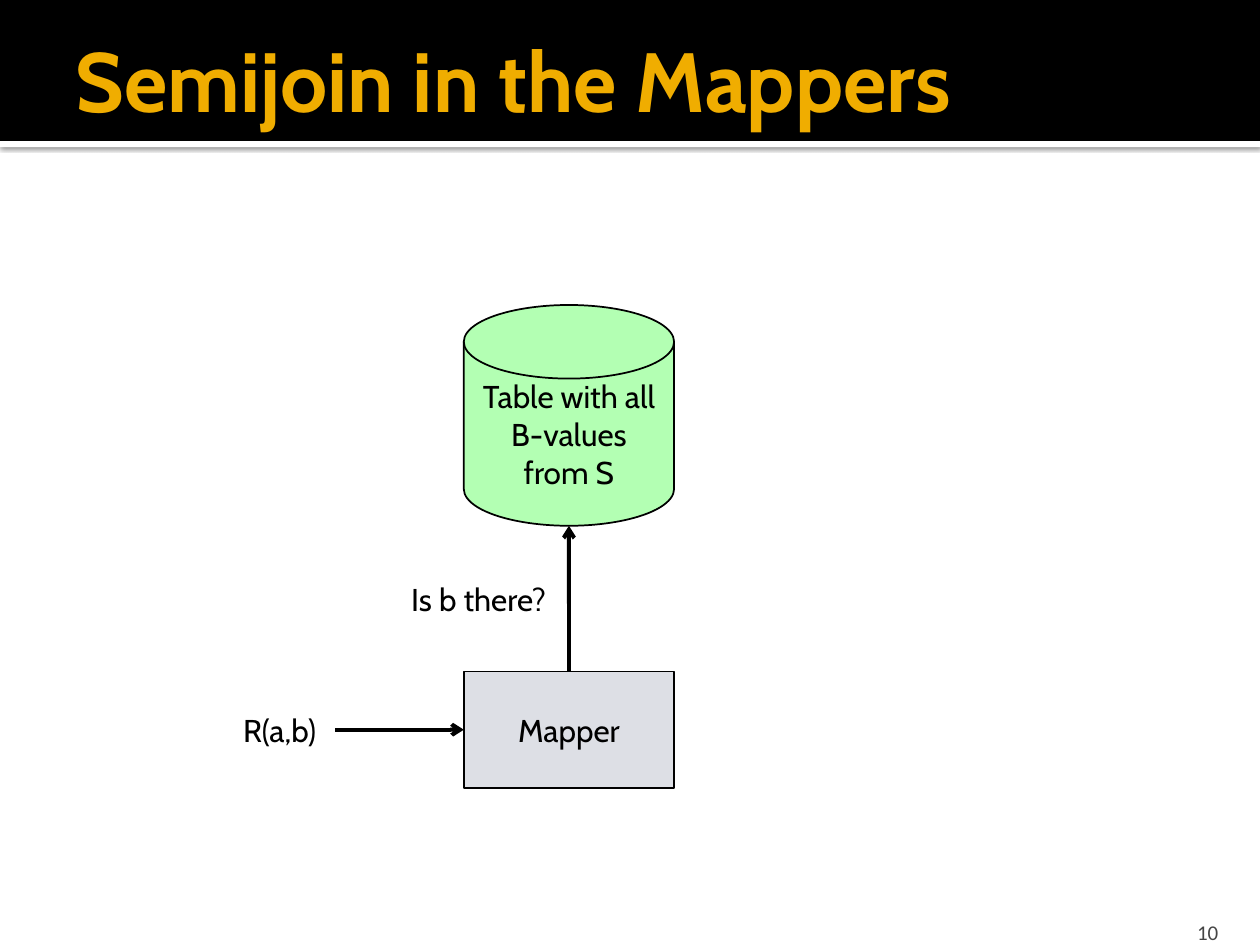
import pptx
import pptx.dml.color
import pptx.enum.shapes
import pptx.enum.text
import pptx.oxml
import pptx.oxml.ns
import pptx.util
from lxml import etree

Cm = pptx.util.Cm
Pt = pptx.util.Pt
SHAPE = pptx.enum.shapes.MSO_SHAPE
ALIGN = pptx.enum.text.PP_ALIGN
ANCHOR = pptx.enum.text.MSO_ANCHOR

PAGE_WIDTH, PAGE_HEIGHT = 25.4, 19.05
COLORS = {
    "black": "000000",
    "white": "FFFFFF",
    "title": "F0AD00",
    "number": "454545",
    "mapper": "DDDFE5",
    "table": "B3FFB3",
}


def color(name):
    return pptx.dml.color.RGBColor.from_string(COLORS[name])


def write(shape, text, size=18, font="Cabin", ink="black", bold=False,
          align=ALIGN.LEFT, anchor=ANCHOR.TOP, wrap=True):
    frame = shape.text_frame
    frame.word_wrap = wrap
    frame.vertical_anchor = anchor
    frame.text = text
    para = frame.paragraphs[0]
    para.alignment = align
    for span in para.runs:
        span.font.name = font
        span.font.size = Pt(size)
        span.font.bold = bold
        span.font.color.rgb = color(ink)
    return frame


def add_block(page, kind, left, top, width, height, fill, outlined=False):
    block = page.shapes.add_shape(kind, Cm(left), Cm(top), Cm(width), Cm(height))
    block.shadow.inherit = False
    block.fill.solid()
    block.fill.fore_color.rgb = color(fill)
    if outlined:
        block.line.color.rgb = color("black")
        block.line.width = Pt(1)
    else:
        block.line.fill.background()
    return block


def add_label(page, text, left, top, width, height, **style):
    box = page.shapes.add_textbox(Cm(left), Cm(top), Cm(width), Cm(height))
    return write(box, text, **style)


def add_arrow(page, x1, y1, x2, y2):
    arrow = page.shapes.add_connector(
        pptx.enum.shapes.MSO_CONNECTOR.STRAIGHT, Cm(x1), Cm(y1), Cm(x2), Cm(y2))
    arrow.line.color.rgb = color("black")
    arrow.line.width = Pt(2.25)
    head = etree.SubElement(arrow.line._get_or_add_ln(), pptx.oxml.ns.qn("a:tailEnd"))
    head.set("type", "arrow")
    etree.SubElement(arrow._element.spPr, pptx.oxml.ns.qn("a:effectLst"))
    return arrow


def add_drop_shadow(shape):
    effects = shape._element.spPr.find(pptx.oxml.ns.qn("a:effectLst"))
    effects.append(pptx.oxml.parse_xml(
        f'<a:outerShdw {pptx.oxml.ns.nsdecls("a")} blurRad="{Pt(2.5)}" '
        f'dist="{Pt(0.8)}" dir="5400000" algn="tl" rotWithShape="0">'
        f'<a:srgbClr val="{COLORS["black"]}"><a:alpha val="60000"/></a:srgbClr>'
        '</a:outerShdw>'))


def draw_header(page, left, top, width, height, title):
    # White strip with a shadow, below the black band
    strip = add_block(page, SHAPE.RECTANGLE, left, top + height, width, 0.13, "white")
    add_drop_shadow(strip)
    add_block(page, SHAPE.RECTANGLE, left, top, width, height, "black")
    # Title
    frame = add_label(page, title, left + 1.27, top + 0.43, width - 1.27, 2.34,
                      size=48, ink="title", bold=True, anchor=ANCHOR.MIDDLE)
    frame.margin_right = Cm(0.13)


def draw_page_number(page, left, top, width, height, number):
    frame = add_label(page, number, left, top, width, height, size=12, font="Calibri",
                      ink="number", align=ALIGN.RIGHT, anchor=ANCHOR.BOTTOM)
    frame.margin_bottom = 0


def draw_semijoin(page, left, top, width, height):
    block_width, mapper_height, table_height = 4.24, 2.34, 4.45
    block_left = left + width - block_width
    center = block_left + block_width / 2
    mapper_top = top + height - mapper_height
    mapper_middle = mapper_top + mapper_height / 2
    table_bottom = top + table_height
    label_height = 1.02

    # Mapper and its input
    mapper = add_block(page, SHAPE.RECTANGLE, block_left, mapper_top,
                       block_width, mapper_height, "mapper", outlined=True)
    write(mapper, "Mapper", align=ALIGN.CENTER, anchor=ANCHOR.MIDDLE)
    add_label(page, "R(a,b)", left, mapper_middle - label_height / 2,
              2.08, label_height, wrap=False)
    feed = add_arrow(page, left + 2.11, mapper_middle, block_left, mapper_middle)
    feed.end_connect(mapper, 1)

    # Lookup table
    table = add_block(page, SHAPE.FLOWCHART_MAGNETIC_DISK, block_left, top,
                      block_width, table_height, "table", outlined=True)
    write(table, "Table with all B-values from S",
          align=ALIGN.CENTER, anchor=ANCHOR.MIDDLE)

    # Question sent to the table
    question = add_arrow(page, center, mapper_top, center, table_bottom)
    question.begin_connect(mapper, 0)
    add_label(page, "Is b there?", center - 3.43,
              (table_bottom + mapper_top - label_height) / 2, 3.23, label_height,
              wrap=False)


def main():
    deck = pptx.Presentation()
    deck.slide_width, deck.slide_height = Cm(PAGE_WIDTH), Cm(PAGE_HEIGHT)
    page = deck.slides.add_slide(deck.slide_layouts[6])
    draw_header(page, 0, 0, PAGE_WIDTH, 2.84, "Semijoin in the Mappers")
    draw_page_number(page, 22.78, 18.29, 2.03, 0.76, "10")
    draw_semijoin(page, 4.65, 6.15, 8.94, 9.73)
    deck.save("out.pptx")


if __name__ == "__main__":
    main()
